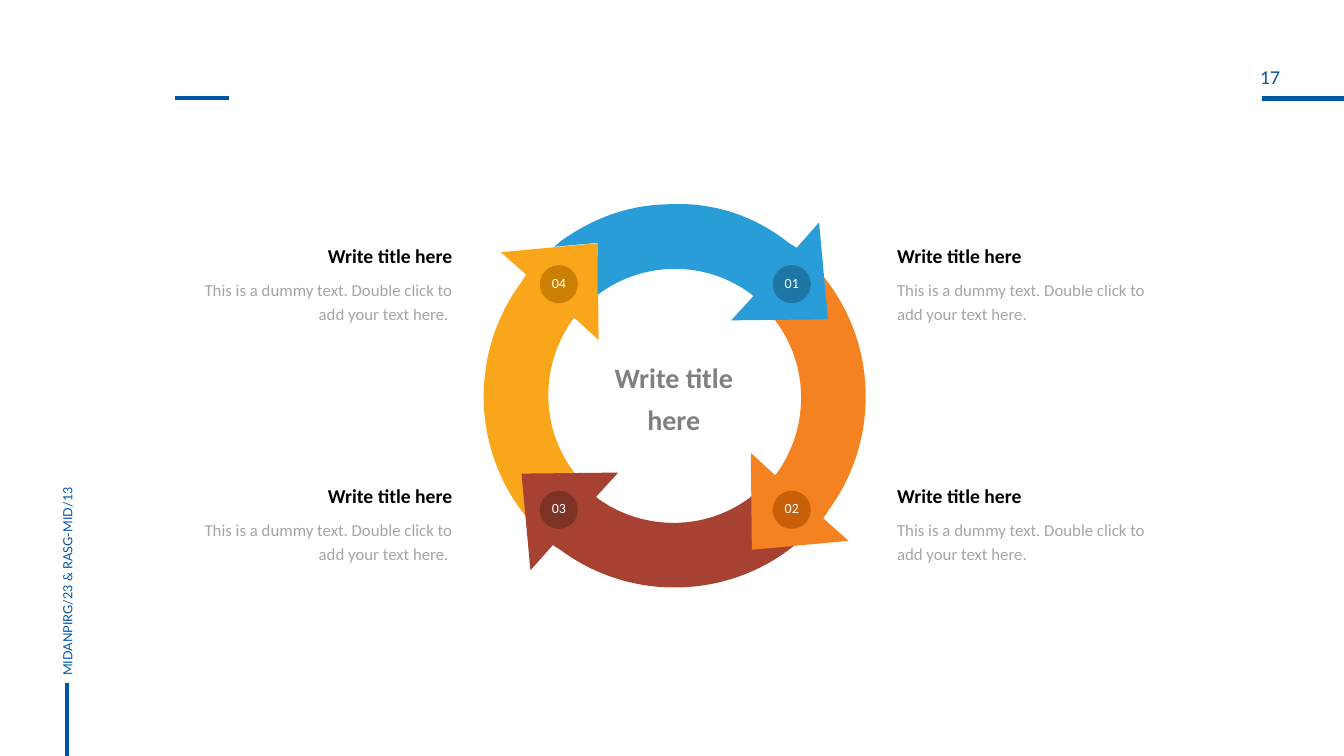
from math import cos, radians, sin
from lxml.etree import SubElement
from pptx import Presentation
from pptx.dml.color import RGBColor
from pptx.enum.shapes import MSO_CONNECTOR, MSO_SHAPE
from pptx.enum.text import MSO_ANCHOR, PP_ALIGN
from pptx.oxml.ns import qn
from pptx.util import Pt

BLUE = "0055A5"
GREY = "808080"
RING_TILT = 312

# Arrow outline around the ring centre, pointing right at the top.
# A step of one point is a line, a step of three points is a curve.
ARROW_HEAD = [[(-13, -136)], [(-6.3, -137.2)], [(-6.5, -161.3)], [(44.5, -114.2)],
              [(-6.4, -67.4)], [(-6.2, -90.8)], [(-8.2, -90.9)]]
PLAIN_TAIL = [[(-53.9, -85.7), (-90, -47.3), (-90, 0)],
              [(-136.4, 0)],
              [(-136.7, -71.1), (-81.6, -129.5), (-13, -136)]]
# This tail is cut along the head of the arrow behind it
CUT_TAIL = [[(-49, -87.2), (-81.6, -56.8), (-89.3, -17.9)],
            [(-89.4, -16.9)], [(-114.4, -44.7)], [(-135.5, -21.9)], [(-134.6, -28.4)],
            [(-128.7, -55.2), (-116.2, -79), (-96.9, -97.3)],
            [(-75.3, -119.7), (-46.5, -134), (-13, -136)]]


def paint(color_format, hex_color, opacity=None):
    color_format.rgb = RGBColor.from_string(hex_color)
    if opacity is not None:
        for color in color_format._xFill.iter(qn("a:srgbClr")):
            SubElement(color, qn("a:alpha")).set("val", str(opacity * 1000))


def fill_plain(shape, hex_color):
    shape.shadow.inherit = False
    shape.fill.solid()
    paint(shape.fill.fore_color, hex_color)
    shape.line.fill.background()


def write(frame, lines, align, margins=(0, 0), wrap=True, line_spacing=None):
    """Each line is (text, size, colour, bold, font, opacity)."""
    frame.word_wrap = wrap
    frame.margin_left = frame.margin_right = Pt(margins[0])
    frame.margin_top = frame.margin_bottom = Pt(margins[1])
    frame.text = "\n".join(line[0] for line in lines)
    for i, (paragraph, line) in enumerate(zip(frame.paragraphs, lines)):
        _, size, color, bold, font_name, opacity = line
        paragraph.alignment = align
        if line_spacing:
            paragraph.line_spacing = line_spacing
        if i:
            paragraph.space_before = Pt(6)
        font = paragraph.runs[0].font
        font.size, font.bold, font.name = Pt(size), bold, font_name
        paint(font.color, color, opacity)


def add_text(slide, box, lines, align, **layout):
    textbox = slide.shapes.add_textbox(*map(Pt, box))
    write(textbox.text_frame, lines, align, **layout)
    return textbox


def add_rule(slide, *ends):
    rule = slide.shapes.add_connector(MSO_CONNECTOR.STRAIGHT, *map(Pt, ends))
    rule.line.width = Pt(3)
    paint(rule.line.color, BLUE)
    SubElement(rule._element.spPr, qn("a:effectLst"))


def add_page_frame(slide, width, height):
    # Page number
    add_rule(slide, width - 58.6, 70.4, width, 70.4)
    add_text(slide, (width - 96, 46.4, 86.4, 23.8),
             [("17", 14, BLUE, False, "Calibri", None)],
             PP_ALIGN.CENTER, wrap=False)
    # Meeting reference up the left edge
    add_rule(slide, 47.7, height - 52.4, 47.7, height)
    reference = add_text(
        slide, (-83.9, height - 191.2, 264.2, 18),
        [("MIDANPIRG/23 & RASG-MID/13", 9, BLUE, False, "Lato", None)],
        PP_ALIGN.LEFT, margins=(7.2, 3.6))
    reference.rotation = 270
    # Heading rule
    add_rule(slide, 125.3, 70, 163.4, 70)


def add_caption(slide, box, body, align):
    add_text(slide, box,
             [("Write title here", 14, "000000", True, "Calibri", None),
              (body, 12, GREY, False, "Calibri", 70)],
             align, margins=(0, 3.6), line_spacing=1.2)


def turned(point, degrees):
    x, y = point
    c, s = cos(radians(degrees)), sin(radians(degrees))
    return x * c - y * s, x * s + y * c


def add_arrow(shapes, center, turn, color, tail):
    steps = ARROW_HEAD + tail
    points = [turned(point, turn) for step in steps for point in step]

    # Place the frame so that its own tilt puts the arrow on the ring
    middle = [(min(axis) + max(axis)) / 2 for axis in zip(*points)]
    tilted = turned(middle, RING_TILT)
    offset = [c + t - m for c, t, m in zip(center, tilted, middle)]
    placed = [(Pt(x + offset[0]), Pt(y + offset[1])) for x, y in points]
    builder = shapes.build_freeform(*placed[0])
    builder.add_line_segments(placed[1:], close=True)
    arrow = builder.convert_to_shape()
    arrow.rotation = RING_TILT
    fill_plain(arrow, color)

    # Join the three points of each curved step
    lines = iter(list(arrow._element.iter(qn("a:lnTo"))))
    for step in steps[1:]:
        parts = [next(lines) for _ in step]
        if len(parts) == 3:
            curve = parts[0].makeelement(qn("a:cubicBezTo"))
            parts[0].addprevious(curve)
            for part in parts:
                curve.append(part[0])
                part.getparent().remove(part)


def add_badge(slide, box, number, color):
    badge = slide.shapes.add_shape(MSO_SHAPE.OVAL, *map(Pt, box))
    fill_plain(badge, color)
    badge.text_frame.vertical_anchor = MSO_ANCHOR.MIDDLE
    write(badge.text_frame, [(number, 10, "FFFFFF", False, "Calibri", None)],
          PP_ALIGN.CENTER, line_spacing=0.8)


def add_cycle(slide, left, top, size):
    center_x, center_y = left + size / 2, top + size / 2

    # Arrows, back to front
    ring = slide.shapes.add_group_shape()
    for turn, color, tail in [(0, "FAA61A", PLAIN_TAIL),
                              (270, "A74233", PLAIN_TAIL),
                              (180, "F58220", PLAIN_TAIL),
                              (90, "289DD8", CUT_TAIL)]:
        add_arrow(ring.shapes, (center_x, center_y), turn, color, tail)

    # Number badges, one on each arrowhead
    diameter = 27.2
    for number, side, level, color in [("01", 1, -1, "1D76A3"),
                                       ("02", 1, 1, "C76009"),
                                       ("04", -1, -1, "CB8004"),
                                       ("03", -1, 1, "7D3226")]:
        add_badge(slide, (center_x + side * 83.2 - diameter / 2 + 0.4,
                          center_y + level * 80.6 - diameter / 2 + 0.4,
                          diameter, diameter), number, color)

    # Central title
    add_text(slide, (center_x - 50.7, center_y - 29.6, 100, 62),
             [(text, 20, GREY, True, "Calibri", None)
              for text in ("Write title", "here")],
             PP_ALIGN.CENTER, margins=(7.2, 3.6), wrap=False)


def add_captions(slide, left, top, width, height):
    body = "This is a dummy text. Double click to add your text here."
    caption_width, caption_height = 187.2, 67.7
    for x, text, align in [
            (left + width - caption_width, body, PP_ALIGN.LEFT),
            (left, body + " ", PP_ALIGN.RIGHT)]:
        for y in (top, top + height - caption_height):
            add_caption(slide, (x, y, caption_width, caption_height), text, align)


def main():
    width, height = 960, 540
    presentation = Presentation()
    presentation.slide_width, presentation.slide_height = Pt(width), Pt(height)
    slide = presentation.slides.add_slide(presentation.slide_layouts[6])
    add_page_frame(slide, width, height)
    add_captions(slide, 136, 167.4, 692, 238.8)
    add_cycle(slide, 345.4, 146.6, 273.2)
    presentation.save("out.pptx")


if __name__ == "__main__":
    main()
